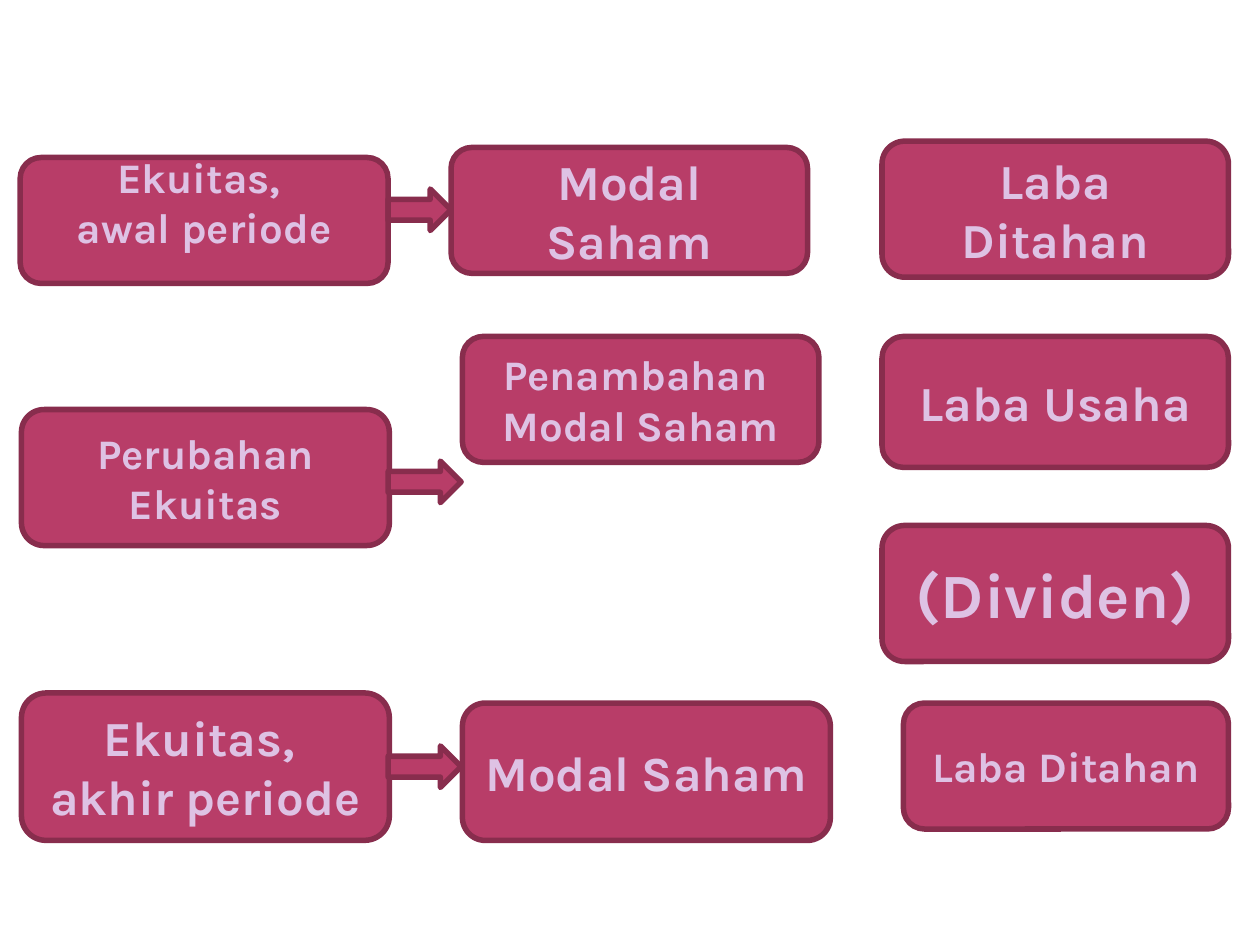
from pptx import Presentation
from pptx.dml.color import RGBColor
from pptx.enum.shapes import MSO_SHAPE as Shape
from pptx.enum.text import MSO_ANCHOR as Anchor, PP_ALIGN as Align
from pptx.util import Inches, Pt

ROSE = RGBColor(0xB8, 0x3D, 0x68)
WINE = RGBColor(0x88, 0x2D, 0x4D)
LILAC = RGBColor(0xDE, 0xC2, 0xE4)

# Left, top, width, height, text size, lines
BOXES = [
    # Equity
    (0.16, 1.25, 2.92, 1, 24, ["Ekuitas, ", "awal periode"]),
    (0.17, 3.25, 2.92, 1.08, 24, ["Perubahan Ekuitas"]),
    (0.17, 5.5, 2.92, 1.17, 28, ["Ekuitas, ", "akhir periode"]),
    # Share capital
    (3.58, 1.17, 2.83, 1, 28, ["Modal Saham"]),
    (3.67, 2.67, 2.83, 1, 24, ["Penambahan ", "Modal Saham"]),
    (3.67, 5.58, 2.92, 1.09, 28, ["Modal Saham"]),
    # Retained earnings
    (7, 1.12, 2.75, 1.08, 28, ["Laba Ditahan"]),
    (7, 2.67, 2.75, 1.04, 28, ["Laba Usaha"]),
    (7, 4.17, 2.75, 1.08, 36, ["(Dividen)"]),
    (7.17, 5.58, 2.58, 1, 24, ["Laba Ditahan"]),
]

# Top and width of the arrows that leave the equity boxes
ARROW_LEFT, ARROW_HEIGHT = 3.08, 0.33
ARROWS = [(1.5, 0.5), (3.66, 0.58), (5.92, 0.58)]


def add_block(page, kind, *place):
    """Add a rose shape with a wine outline."""
    block = page.shapes.add_shape(kind, *map(Inches, place))
    block.shadow.inherit = False
    block.fill.solid()
    block.fill.fore_color.rgb = ROSE
    block.line.color.rgb = WINE
    block.line.width = Pt(3.15)
    return block


def add_box(page, left, top, width, height, size, lines):
    """Add a rounded box with centred bold lines."""
    box = add_block(page, Shape.ROUNDED_RECTANGLE, left, top, width, height)
    frame = box.text_frame
    frame.word_wrap = True
    frame.vertical_anchor = Anchor.MIDDLE
    font_format = {"name": "Karla", "size": Pt(size), "bold": True}
    for index, line in enumerate(lines):
        para = frame.paragraphs[0] if index == 0 else frame.add_paragraph()
        para.alignment = Align.CENTER
        span = para.add_run()
        span.text = line
        for name, value in font_format.items():
            setattr(span.font, name, value)
        span.font.color.rgb = LILAC
    return box


def main():
    deck = Presentation()
    deck.slide_width, deck.slide_height = Inches(10), Inches(7.5)
    page = deck.slides.add_slide(deck.slide_layouts[6])

    boxes = [add_box(page, *values) for values in BOXES]
    # The opening equity text sits high in its box
    boxes[0].text_frame.margin_bottom = Inches(0.35)

    for top, width in ARROWS:
        add_block(page, Shape.RIGHT_ARROW, ARROW_LEFT, top, width, ARROW_HEIGHT)

    deck.save("out.pptx")


if __name__ == "__main__":
    main()
